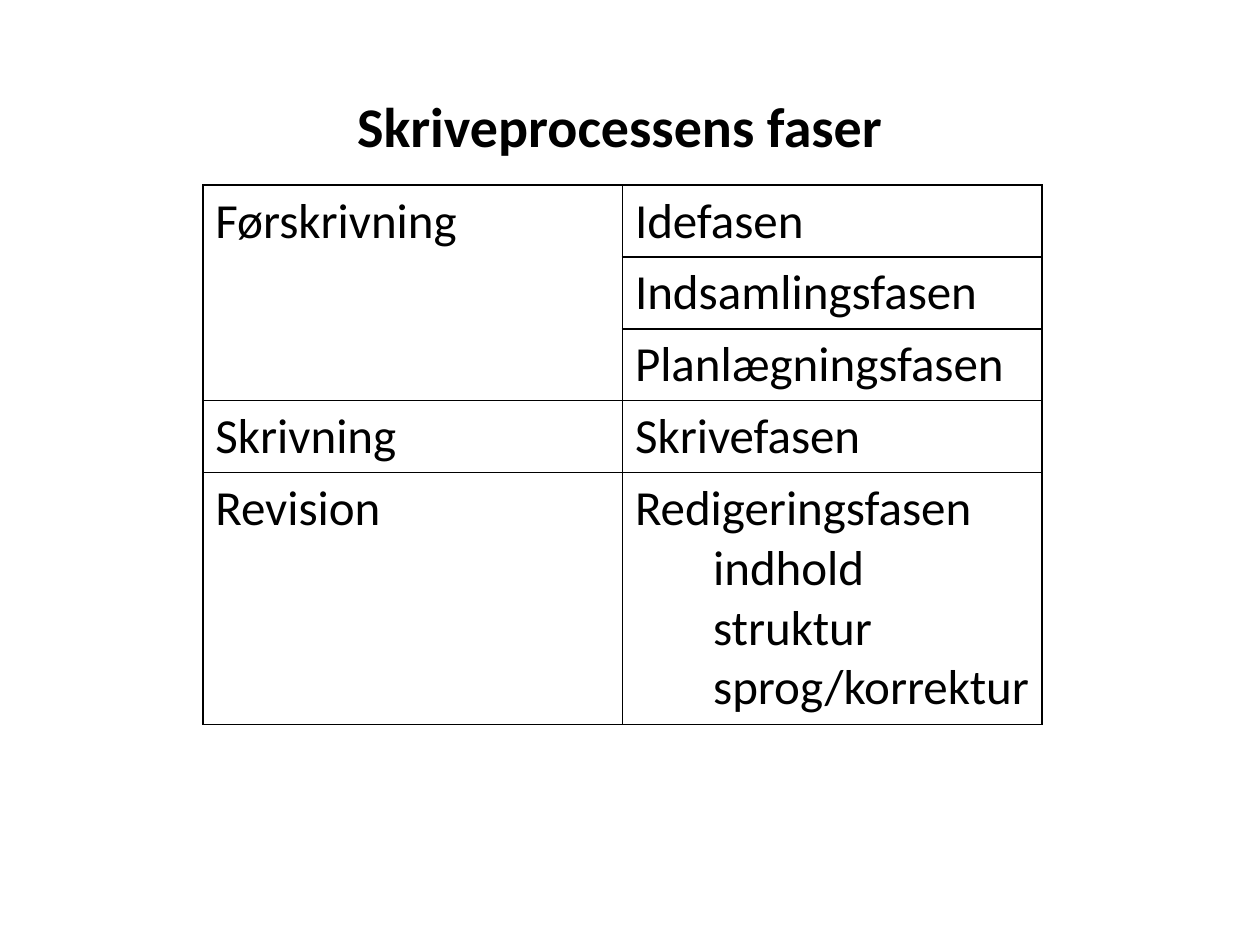
from lxml import etree
from pptx import Presentation
from pptx.dml.color import RGBColor
from pptx.enum.text import PP_ALIGN
from pptx.oxml.ns import qn
from pptx.util import Inches, Pt

CENTER = PP_ALIGN.CENTER
FONT = "Calibri"
COLORS = {"text": "000000", "border": "000000"}

ROW_HEIGHT = 0.57
LAST_ROW_HEIGHT = 2
COLUMN_WIDTH = 3.33
SUBITEM_INDENT = 0.62

# Each phase of writing with its steps; a step has a name and sub-items.
PHASES = [
    ("Førskrivning", [("Idefasen", []), ("Indsamlingsfasen", []), ("Planlægningsfasen", [])]),
    ("Skrivning", [("Skrivefasen", [])]),
    ("Revision", [("Redigeringsfasen", ["indhold", "struktur", "sprog/korrektur"])]),
]


def format_runs(p, size, bold=False):
    for r in p.runs:
        r.font.name = FONT
        r.font.size = Pt(size)
        r.font.bold = bold
        r.font.color.rgb = RGBColor.from_string(COLORS["text"])


def add_title(slide, text):
    sp = slide.shapes.add_textbox(Inches(0.51), Inches(0.68), Inches(8.82), Inches(6.3))
    tf = sp.text_frame
    tf.word_wrap = True
    tf.text = text
    p = tf.paragraphs[0]
    p.alignment = CENTER
    format_runs(p, 32, bold=True)


def set_borders(cell):
    tc_pr = cell._tc.get_or_add_tcPr()
    for position, side in enumerate(("lnL", "lnR", "lnT", "lnB")):
        ln = etree.Element(qn(f"a:{side}"), w=str(Pt(1)))
        fill = etree.SubElement(ln, qn("a:solidFill"))
        etree.SubElement(fill, qn("a:srgbClr"), val=COLORS["border"])
        tc_pr.insert(position, ln)


def fill_cell(cell, text, subitems=()):
    tf = cell.text_frame
    tf.text = "\n".join([text, *subitems])
    for i, p in enumerate(tf.paragraphs):
        format_runs(p, 28)
        if i > 0:
            p._p.get_or_add_pPr().set("marL", str(Inches(SUBITEM_INDENT)))


def add_phase_table(slide):
    row_count = sum(len(steps) for _, steps in PHASES)
    heights = [ROW_HEIGHT] * (row_count - 1) + [LAST_ROW_HEIGHT]
    frame = slide.shapes.add_table(
        row_count, 2, Inches(1.61), Inches(1.47),
        Inches(2 * COLUMN_WIDTH), Inches(sum(heights)))
    table = frame.table
    table.first_row = False
    table.horz_banding = False
    for column in table.columns:
        column.width = Inches(COLUMN_WIDTH)
    for row, height in zip(table.rows, heights):
        row.height = Inches(height)
    for cell in table.iter_cells():
        cell.fill.background()
        set_borders(cell)

    top = 0
    for phase, steps in PHASES:
        if len(steps) > 1:
            table.cell(top, 0).merge(table.cell(top + len(steps) - 1, 0))
        fill_cell(table.cell(top, 0), phase)
        for row, (step, subitems) in enumerate(steps, top):
            fill_cell(table.cell(row, 1), step, subitems)
        top += len(steps)


def main():
    prs = Presentation()
    prs.slide_width = Inches(10)
    prs.slide_height = Inches(7.5)
    slide = prs.slides.add_slide(prs.slide_layouts[6])
    add_title(slide, "Skriveprocessens faser")
    add_phase_table(slide)
    prs.save("out.pptx")


if __name__ == "__main__":
    main()
